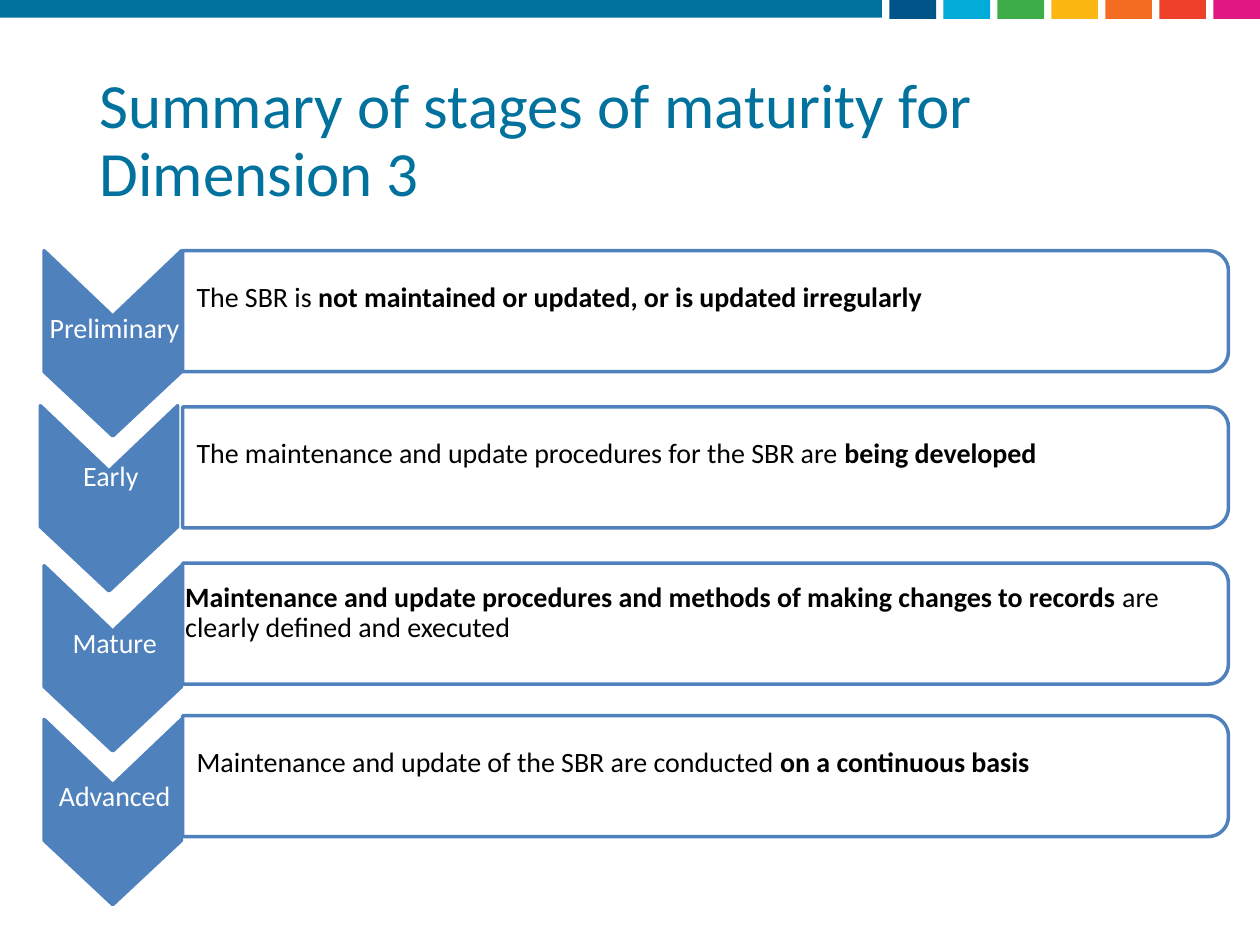
import math
from dataclasses import dataclass

import pptx
import pptx.dml.color
import pptx.enum.shapes
import pptx.enum.text
import pptx.util

Inches = pptx.util.Inches
Pt = pptx.util.Pt


@dataclass
class Theme:
    font: str = "Calibri"
    teal: str = "01719D"
    blue: str = "4F81BC"
    white: str = "FFFFFF"
    black: str = "000000"
    strip: tuple = ("005489", "03ACD8", "3DAD48", "FDB713",
                    "F36D22", "EF412A", "E01983")
    head: int = 36
    body: int = 16
    rule: int = 2


def tint(code):
    return pptx.dml.color.RGBColor.from_string(code)


class Deck:
    def __init__(self, theme):
        self.theme = theme
        self.file = pptx.Presentation()
        self.file.slide_width = Inches(10)
        self.file.slide_height = Inches(7.5)
        self.slide = self.file.slides.add_slide(self.file.slide_layouts[5])

    def add_run(self, para, text, size, color, bold=False):
        run = para.add_run()
        run.text = text
        run.font.name = self.theme.font
        run.font.size = Pt(size)
        run.font.bold = bold
        run.font.color.rgb = tint(color)

    def add_title(self, text, left, top, width, height):
        title = self.slide.shapes.title
        title.left, title.top = Inches(left), Inches(top)
        title.width, title.height = Inches(width), Inches(height)
        frame = title.text_frame
        frame.auto_size = pptx.enum.text.MSO_AUTO_SIZE.NONE
        frame.vertical_anchor = pptx.enum.text.MSO_ANCHOR.MIDDLE
        para = frame.paragraphs[0]
        para.alignment = pptx.enum.text.PP_ALIGN.LEFT
        para.line_spacing = 0.9
        self.add_run(para, text, self.theme.head, self.theme.teal)

    def add_bar(self, left, width, height, color):
        bar = self.slide.shapes.add_shape(
            pptx.enum.shapes.MSO_SHAPE.RECTANGLE,
            Inches(left), 0, Inches(width), Inches(height))
        bar.shadow.inherit = False
        bar.fill.solid()
        bar.fill.fore_color.rgb = tint(color)
        bar.line.fill.background()

    def add_form(self, points, fill=None):
        spots = [(Inches(x), Inches(y)) for x, y in points]
        build = self.slide.shapes.build_freeform(*spots[0], scale=1.0)
        build.add_line_segments(spots[1:], close=True)
        form = build.convert_to_shape()
        form.shadow.inherit = False
        if fill:
            form.fill.solid()
            form.fill.fore_color.rgb = tint(fill)
        else:
            form.fill.background()
        form.line.color.rgb = tint(self.theme.blue)
        form.line.width = Pt(self.theme.rule)

    def add_arrow(self, left, top):
        mid, right = left + 0.545, left + 1.09
        self.add_form([(left, top), (mid, top + 0.52), (right, top),
                       (right, top + 0.96), (mid, top + 1.47),
                       (left, top + 0.96)], self.theme.blue)

    def add_panel(self, left, top, width, height, radius=0.16, steps=8):
        right, base = left + width, top + height
        turns = [math.pi / 2 * i / steps for i in range(steps + 1)]
        upper = [(right - radius + radius * math.sin(a),
                  top + radius - radius * math.cos(a)) for a in turns]
        lower = [(x, top + base - y) for x, y in reversed(upper)]
        self.add_form([(left, top)] + upper + lower + [(left, base)])

    def add_box(self, left, top, width, height, wrap, pad=(0, 0)):
        box = self.slide.shapes.add_textbox(
            Inches(left), Inches(top), Inches(width), Inches(height))
        frame = box.text_frame
        frame.word_wrap = wrap
        frame.margin_left, frame.margin_top = Inches(pad[0]), Inches(pad[1])
        frame.margin_right = frame.margin_bottom = 0
        return frame.paragraphs[0]

    def add_label(self, text, mid, top, width):
        para = self.add_box(mid - width / 2, top, width, 0.2, False)
        para.alignment = pptx.enum.text.PP_ALIGN.CENTER
        para.line_spacing = Pt(9.9)
        self.add_run(para, text, self.theme.body, self.theme.white)

    def add_note(self, parts, top, pad, space):
        para = self.add_box(1.47, top, 8.25, 0.92, True, pad)
        para.line_spacing = space
        for text, bold in parts:
            self.add_run(para, text, self.theme.body, self.theme.black, bold)


STAGES = [
    ("Preliminary", 1.03, 0.35, 1.99, 2.59, 1.99, (0.09, 0.21), 1.0,
     [("The SBR is ", False),
      ("not maintained or updated, or is updated irregularly", True)]),
    ("Early", 0.46, 0.32, 3.22, 3.77, 3.23, (0.09, 0.21), 1.0,
     [("The maintenance and update procedures for the SBR are ", False),
      ("being developed", True)]),
    ("Mature", 0.68, 0.35, 4.49, 5.09, 4.47, (0, 0.14), 0.9,
     [("Maintenance and update procedures and methods of making changes "
       "to records ", True),
      ("are clearly defined and executed", False)]),
    ("Advanced", 0.89, 0.35, 5.71, 6.31, 5.68, (0.09, 0.21), 1.0,
     [("Maintenance and update of the SBR are conducted ", False),
      ("on a continuous basis", True)]),
]


def main():
    theme = Theme()
    deck = Deck(theme)
    deck.add_bar(0, 7, 0.14, theme.teal)
    first, wide = 7.06, 0.37
    pitch = (10 - wide - first) / (len(theme.strip) - 1)
    for i, color in enumerate(theme.strip):
        deck.add_bar(first + i * pitch, wide, 0.15, color)
    deck.add_title("Summary of stages of maturity for Dimension 3",
                   0.69, 0.4, 8.62, 1.45)
    for name, width, left, tip, line, top, pad, space, parts in STAGES:
        deck.add_arrow(left, tip)
        deck.add_panel(1.45, top, 8.3, 0.96)
        deck.add_label(name, left + 0.56, line, width)
        deck.add_note(parts, top + 0.02, pad, space)
    deck.file.save("out.pptx")


if __name__ == "__main__":
    main()
